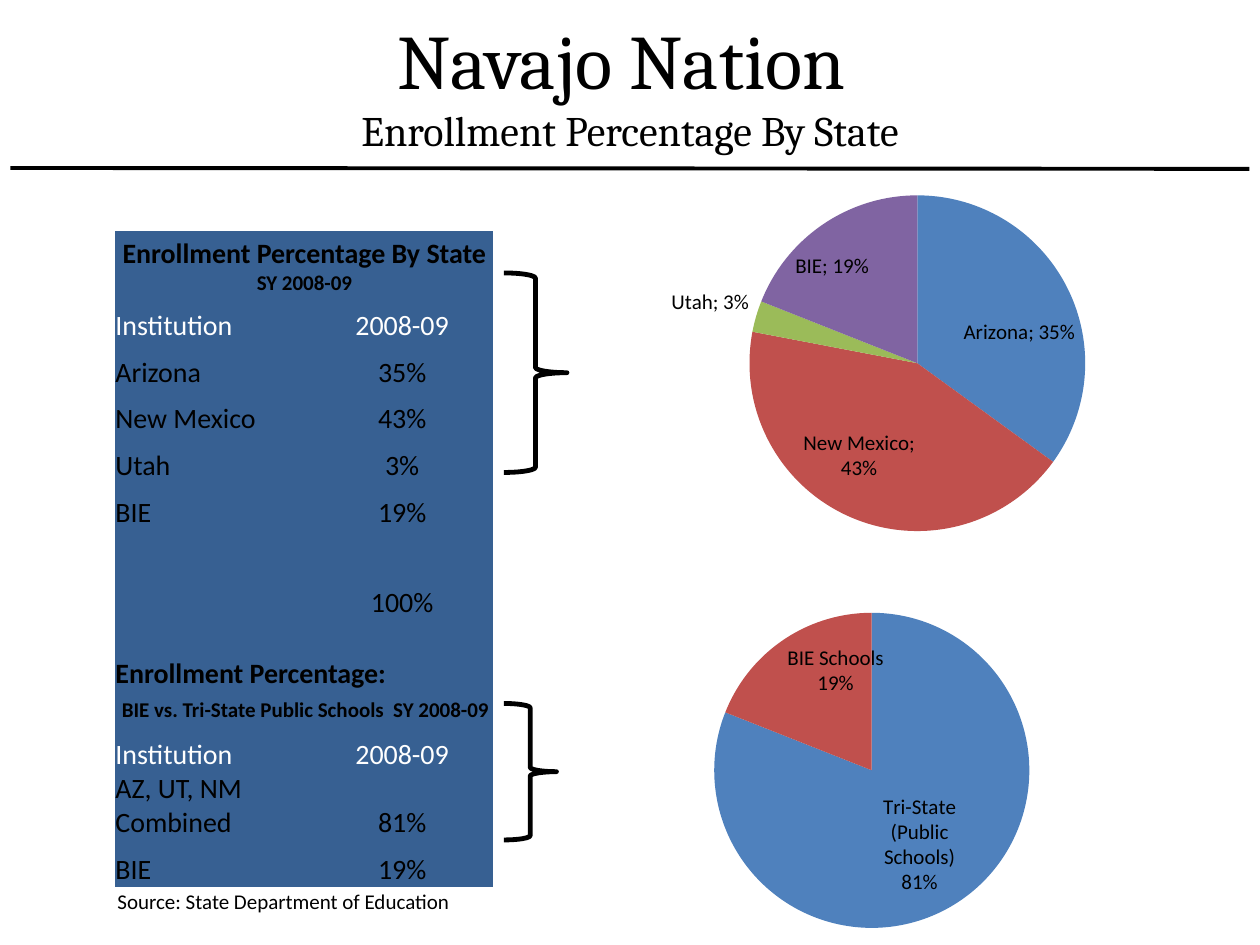
import pptx
import pptx.util
import pptx.chart.data
import pptx.dml.color
import pptx.enum.chart
import pptx.enum.shapes
import pptx.enum.text
import pptx.oxml
import pptx.oxml.ns
from lxml import etree

Pt = pptx.util.Pt
qn = pptx.oxml.ns.qn
Align = pptx.enum.text.PP_ALIGN
Anchor = pptx.enum.text.MSO_ANCHOR
Label = pptx.enum.chart.XL_LABEL_POSITION

COLORS = {"black": "000000", "white": "FFFFFF", "panel": "376092", "blue": "4F81BD",
          "red": "C0504D", "green": "9BBB59", "purple": "8064A2"}
SLICES = ["blue", "red", "green", "purple"]

TITLE = [("Navajo Nation ", 44), ("Enrollment Percentage By State", 24)]
SOURCE = "Source: State Department of Education"
STATE_HEADING = [[("Enrollment Percentage By State ", 16), ("SY 2008-09", 12)]]
SCHOOL_HEADING = [[("Enrollment Percentage:", 16)],
                  [(" ", 16), ("BIE vs. Tri-State Public Schools  SY 2008-09", 12)]]
COLUMN_NAMES = ("Institution", "2008-09")
ROW = 26.65
TABLE_ROWS = [
    (37.4, STATE_HEADING), (ROW, COLUMN_NAMES),
    (ROW, ("Arizona", "35%")), (ROW, ("New Mexico", "43%")),
    (ROW, ("Utah", "3%")), (ROW, ("BIE", "19%")),
    (ROW, ("", "")), (25.2, ("", "100%")),
    (59.8, SCHOOL_HEADING), (ROW, COLUMN_NAMES),
    (ROW, ("AZ, UT, NM Combined", "81%")), (ROW, ("BIE", "19%")),
]
TABLE_LEFT, TABLE_TOP, COLUMN_WIDTHS = 66, 132, (111.6, 104.4)

PIES = [
    {"box": (282, 102, 438, 240), "plot": {"x": 0.334, "y": 0.04, "w": 0.438, "h": 0.8},
     "data": {"Arizona": 0.35, "New Mexico": 0.43, "Utah": 0.03, "BIE": 0.19},
     "separator": "; ",
     "labels": {"show_value": True, "show_percentage": False, "position": Label.BEST_FIT}},
    {"box": (306, 330, 384, 210), "plot": {"x": 0.266, "y": 0.095, "w": 0.469, "h": 0.86},
     "data": {"Tri-State (Public Schools)": 81, "BIE Schools": 19},
     "separator": "\n",
     "labels": {"show_value": False, "show_percentage": True, "position": Label.INSIDE_END}},
]
BRACES = [(288, 156, 36, 114), (288, 402, 30, 78)]


def points(values):
    return [Pt(value) for value in values]


def rgb(name):
    return pptx.dml.color.RGBColor.from_string(COLORS[name])


def assign(target, values):
    for name, value in values.items():
        setattr(target, name, value)


def style(font, size, color="black", name="Calibri", bold=False):
    assign(font, {"size": Pt(size), "name": name, "bold": bold})
    font.color.rgb = rgb(color)


def add_span(para, text, size, **look):
    span = para.add_run()
    span.text = text
    style(span.font, size, **look)


def fill_cell(cell, paragraphs, align, **look):
    assign(cell, {"margin_left": 0, "margin_right": 0, "margin_top": 0, "margin_bottom": 0,
                  "vertical_anchor": Anchor.BOTTOM})
    cell.fill.solid()
    cell.fill.fore_color.rgb = rgb("panel")
    for index, spans in enumerate(paragraphs):
        para = cell.text_frame.add_paragraph() if index else cell.text_frame.paragraphs[0]
        para.alignment = align
        for text, size in spans:
            if text:
                add_span(para, text, size, **look)


def add_title(page):
    title = page.shapes.title
    assign(title, dict(zip(("left", "top", "width", "height"), points((0, 0, 720, 96)))))
    title.text_frame.vertical_anchor = Anchor.MIDDLE
    para = title.text_frame.paragraphs[0]
    para.alignment = Align.CENTER
    for index, (text, size) in enumerate(TITLE):
        if index:
            para.add_line_break()
        add_span(para, text, size, name="Cambria")


def add_enrollment_table(page):
    size = (sum(COLUMN_WIDTHS), sum(height for height, _ in TABLE_ROWS))
    table = page.shapes.add_table(len(TABLE_ROWS), 2,
                                  *points((TABLE_LEFT, TABLE_TOP) + size)).table
    assign(table, {"first_row": False, "horz_banding": False})
    style_id = table._tbl.tblPr.find(qn("a:tableStyleId"))
    style_id.text = "{2D5ABB26-0587-4C30-8999-92F81FD0307C}"
    for column, width in zip(table.columns, COLUMN_WIDTHS):
        column.width = Pt(width)
    for index, (height, content) in enumerate(TABLE_ROWS):
        table.rows[index].height = Pt(height)
        left, right = table.cell(index, 0), table.cell(index, 1)
        if isinstance(content, list):
            left.merge(right)
            align = Align.CENTER if content is STATE_HEADING else Align.LEFT
            fill_cell(left, content, align, bold=True)
            continue
        color = "white" if content is COLUMN_NAMES else "black"
        for cell, text, align in zip((left, right), content, (Align.LEFT, Align.CENTER)):
            fill_cell(cell, [[(text, 16)]], align, color=color)


def add_pie(page, pie):
    data = pptx.chart.data.CategoryChartData()
    data.categories = list(pie["data"])
    data.add_series("Series 1", list(pie["data"].values()))
    chart = page.shapes.add_chart(pptx.enum.chart.XL_CHART_TYPE.PIE,
                                  *points(pie["box"]), data).chart
    assign(chart, {"has_title": False, "has_legend": False})
    style(chart.font, 18)
    plot = chart.plots[0]
    assign(plot, {"vary_by_categories": True, "has_data_labels": True})
    for index, color in zip(range(len(pie["data"])), SLICES):
        fill = plot.series[0].points[index].format.fill
        fill.solid()
        fill.fore_color.rgb = rgb(color)
    labels = plot.data_labels
    assign(labels, {"show_category_name": True, "number_format": "0%",
                    "number_format_is_linked": False, **pie["labels"]})
    style(labels.font, 12)
    separator = etree.Element(qn("c:separator"))
    separator.text = pie["separator"]
    labels._element.find(qn("c:showBubbleSize")).addnext(separator)

    area = chart._chartSpace.find(".//" + qn("c:plotArea"))
    for old in area.findall(qn("c:layout")):
        area.remove(old)
    layout = etree.Element(qn("c:layout"))
    manual = etree.SubElement(layout, qn("c:manualLayout"))
    settings = {"layoutTarget": "inner", "xMode": "edge", "yMode": "edge", **pie["plot"]}
    for name, value in settings.items():
        etree.SubElement(manual, qn("c:" + name)).set("val", str(value))
    area.insert(0, layout)


def add_brace(page, box):
    brace = page.shapes.add_shape(pptx.enum.shapes.MSO_SHAPE.RIGHT_BRACE, *points(box))
    brace.shadow.inherit = False
    brace.fill.background()
    brace.line.color.rgb = rgb("black")
    brace.line.width = Pt(2.75)


def add_source(page):
    box = page.shapes.add_textbox(*points((60, 504, 206, 21.8)))
    assign(box.text_frame, {"word_wrap": False,
                            "auto_size": pptx.enum.text.MSO_AUTO_SIZE.SHAPE_TO_FIT_TEXT})
    add_span(box.text_frame.paragraphs[0], SOURCE, 12)


def add_rule(page):
    rule = page.shapes.add_connector(pptx.enum.shapes.MSO_CONNECTOR.STRAIGHT,
                                     *points((6, 96, 714, 96.5)))
    rule.line.color.rgb = rgb("black")
    rule.line.width = Pt(2.25)
    etree.SubElement(rule._element.spPr, qn("a:effectLst"))


def main():
    deck = pptx.Presentation()
    assign(deck, {"slide_width": Pt(720), "slide_height": Pt(540)})
    page = deck.slides.add_slide(deck.slide_layouts[5])
    add_title(page)
    add_enrollment_table(page)
    for pie, brace in zip(PIES, BRACES):
        add_pie(page, pie)
        add_brace(page, brace)
    add_source(page)
    add_rule(page)
    deck.save("out.pptx")


if __name__ == "__main__":
    main()
